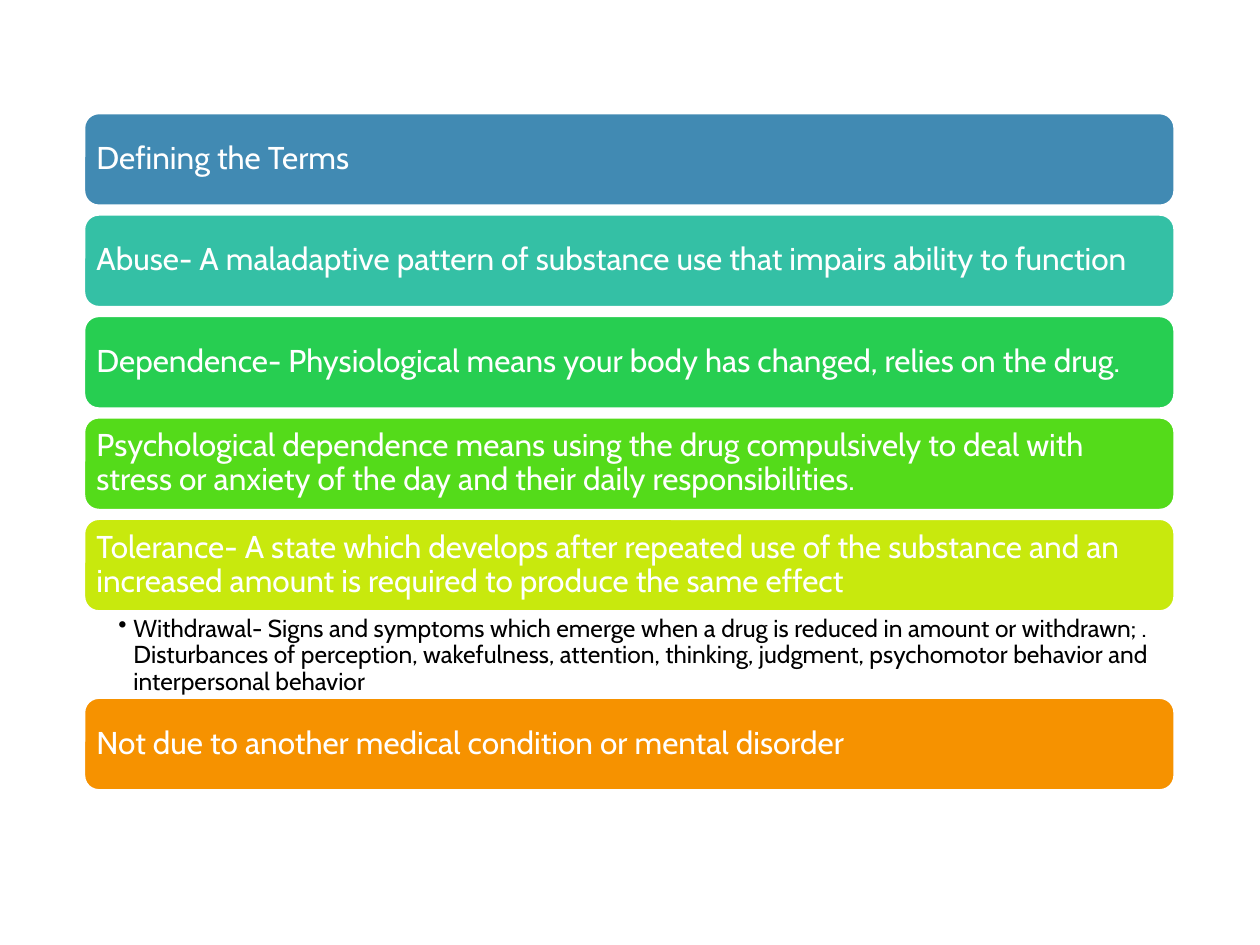
import pptx
import pptx.util
import pptx.dml.color
import pptx.enum.shapes
import pptx.enum.text
from lxml import etree

Inches = pptx.util.Inches
Pt = pptx.util.Pt

COLORS = {
    "white": "FFFFFF",
    "black": "000000",
    "blue": "418AB3",
    "teal": "34C0A5",
    "green": "27CE51",
    "lime": "54DB1A",
    "yellow": "C8E90D",
    "orange": "F69200",
}
FONT = "Cabin"
BAR_HEIGHT = Inches(0.75)
NOTE_HEIGHT = Inches(0.67)

TERMS = [
    ("blue", "Defining the Terms"),
    ("teal", "Abuse- A maladaptive pattern of substance use that impairs ability to function"),
    ("green", "Dependence- Physiological means your body has changed, relies on the drug."),
    ("lime", "Psychological dependence means using the drug compulsively to deal with "
             "stress or anxiety of the day and their daily responsibilities."),
    ("yellow", "Tolerance- A state which develops after repeated use of the substance and "
               "an increased amount is required to produce the same effect"),
]
WITHDRAWAL = (
    "Withdrawal- Signs and symptoms which emerge when a drug is reduced in amount or "
    "withdrawn; . Disturbances of perception, wakefulness, attention, thinking, judgment, "
    "psychomotor behavior and interpersonal behavior"
)
EXCLUSION = ("orange", "Not due to another medical condition or mental disorder")


def rgb(name):
    """Return the named colour."""
    return pptx.dml.color.RGBColor.from_string(COLORS[name])


def write(frame, text, size, color, insets, anchor):
    """Fill a text frame with one left-aligned paragraph and return it."""
    frame.word_wrap = True
    frame.vertical_anchor = anchor
    frame.margin_left, frame.margin_top, frame.margin_right, frame.margin_bottom = map(Inches, insets)
    paragraph = frame.paragraphs[0]
    paragraph.text = text
    paragraph.alignment = pptx.enum.text.PP_ALIGN.LEFT
    paragraph.line_spacing = 0.9
    paragraph.font.name = FONT
    paragraph.font.size = Pt(size)
    paragraph.font.color.rgb = rgb(color)
    return paragraph


def add_bar(slide, left, top, width, color, text):
    """Place one rounded bar holding a term."""
    bar = slide.shapes.add_shape(
        pptx.enum.shapes.MSO_SHAPE.ROUNDED_RECTANGLE, left, top, width, BAR_HEIGHT)
    bar.shadow.inherit = False
    bar.fill.solid()
    bar.fill.fore_color.rgb = rgb(color)
    bar.line.color.rgb = rgb("white")
    bar.line.width = Pt(2.5)
    write(bar.text_frame, text, 18, "white", (0.07, 0.07, 0.07, 0.07),
          pptx.enum.text.MSO_ANCHOR.MIDDLE)


def add_note(slide, left, top, width, text):
    """Place the bulleted note under a bar."""
    note = slide.shapes.add_textbox(left, top, width, NOTE_HEIGHT)
    paragraph = write(note.text_frame, text, 14, "black", (0.28, 0.03, 0.14, 0.03),
                      pptx.enum.text.MSO_ANCHOR.TOP)
    paragraph.level = 1
    properties = paragraph._p.get_or_add_pPr()
    properties.set("marL", str(Inches(0.12)))
    properties.set("indent", str(-Inches(0.12)))
    bullet = etree.SubElement(properties, pptx.oxml.ns.qn("a:buChar"))
    bullet.set("char", "•")


def add_term_list(slide, left, top, width, height):
    """Stack the bars with equal gaps, then the note and the closing bar."""
    bars_height = BAR_HEIGHT * (len(TERMS) + 1)
    gap = (height - bars_height - NOTE_HEIGHT) // (len(TERMS) - 1)
    for index, (color, text) in enumerate(TERMS):
        add_bar(slide, left, top + index * (BAR_HEIGHT + gap), width, color, text)
    closing_top = top + height - BAR_HEIGHT
    add_note(slide, left, closing_top - NOTE_HEIGHT, width, WITHDRAWAL)
    add_bar(slide, left, closing_top, width, *EXCLUSION)


def main():
    """Build the slide and save it."""
    deck = pptx.Presentation()
    deck.slide_width, deck.slide_height = Inches(10), Inches(7.5)
    slide = deck.slides.add_slide(deck.slide_layouts[6])
    add_term_list(slide, Inches(0.66), Inches(0.89), Inches(8.67), Inches(5.39))
    deck.save("out.pptx")


if __name__ == "__main__":
    main()
